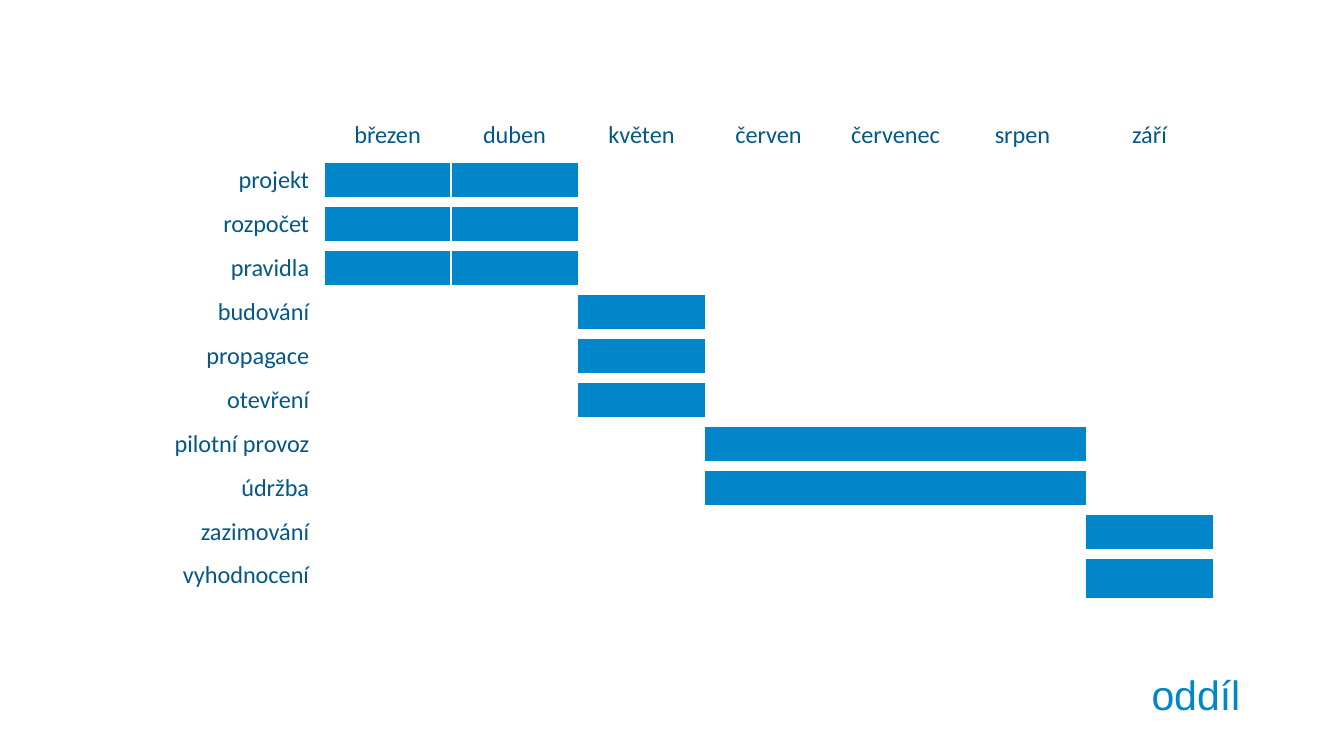
from lxml.etree import SubElement
from pptx import Presentation
from pptx.dml.color import RGBColor
from pptx.enum.text import MSO_ANCHOR as Anchor, PP_ALIGN as Align
from pptx.oxml.ns import qn
from pptx.util import Pt

EMU_PER_PX = 914400 / 134.4
COLORS = {"bar": "0086C9", "label": "035887", "gap": "FFFFFF"}
LABEL_FONT = {"name": "Calibri", "size": Pt(13)}
SIGN_FONT = {"name": "Arial", "size": Pt(22)}
CELL_FORMAT = {"margin_left": 15, "margin_right": 15, "margin_top": 6, "margin_bottom": 6}
PLAIN_TABLE_STYLE = "{2D5ABB26-0587-4C30-8999-92F81FD0307C}"

MONTHS = ["březen", "duben", "květen", "červen", "červenec", "srpen", "září"]
TASKS = [
    ("projekt", "březen", "duben"),
    ("rozpočet", "březen", "duben"),
    ("pravidla", "březen", "duben"),
    ("budování", "květen", "květen"),
    ("propagace", "květen", "květen"),
    ("otevření", "květen", "květen"),
    ("pilotní provoz", "červen", "srpen"),
    ("údržba", "červen", "srpen"),
    ("zazimování", "září", "září"),
    ("vyhodnocení", "září", "září"),
]


def px(value):
    return round(value * EMU_PER_PX)


def color(name):
    return RGBColor.from_string(COLORS[name])


class SlideBuilder:
    def __init__(self, presentation):
        self.slide = presentation.slides.add_slide(presentation.slide_layouts[6])

    def add_words(self, paragraph, text, align, font, color_name):
        paragraph.alignment = align
        run = paragraph.add_run()
        run.text = text
        for name, value in font.items():
            setattr(run.font, name, value)
        run.font.color.rgb = color(color_name)

    def text(self, left, top, width, height, text):
        frame = self.slide.shapes.add_textbox(*map(px, (left, top, width, height))).text_frame
        frame.word_wrap = True
        self.add_words(frame.paragraphs[0], text, Align.CENTER, SIGN_FONT, "bar")

    def borders(self, cell, widths):
        properties = cell._tc.get_or_add_tcPr()
        for side in "LRTB":
            if side in widths:
                line = SubElement(properties, qn(f"a:ln{side}"), w=str(Pt(widths[side])))
                fill = SubElement(line, qn("a:solidFill"))
                SubElement(fill, qn("a:srgbClr"), val=COLORS["gap"])

    def cell(self, cell, text, align, widths, filled=False):
        for name, value in CELL_FORMAT.items():
            setattr(cell, name, px(value))
        cell.vertical_anchor = Anchor.MIDDLE
        self.borders(cell, widths)
        if filled:
            cell.fill.solid()
            cell.fill.fore_color.rgb = color("bar")
        else:
            cell.fill.background()
        paragraph = cell.text_frame.paragraphs[0]
        if text:
            self.add_words(paragraph, text, align, LABEL_FONT, "label")
        else:
            SubElement(paragraph._p, qn("a:endParaRPr"), sz=str(LABEL_FONT["size"].centipoints))

    def gantt(self, left, top, label_width, month_width, header_height, row_height):
        widths = [label_width] + [month_width] * len(MONTHS)
        heights = [header_height] + [row_height] * len(TASKS)
        frame = self.slide.shapes.add_table(
            len(heights), len(widths), px(left), px(top), px(sum(widths)), px(sum(heights)))
        table = frame.table
        table.first_row = table.horz_banding = False
        table._tbl.tblPr.find(qn("a:tableStyleId")).text = PLAIN_TABLE_STYLE
        for column, width in zip(table.columns, widths):
            column.width = px(width)
        for row, height in zip(table.rows, heights):
            row.height = px(height)

        self.cell(table.cell(0, 0), "", Align.CENTER, {"R": 1.5})
        for column, month in enumerate(MONTHS, 1):
            sides = {"L": 1.5, "B": 6}
            if column < len(MONTHS):
                sides["R"] = 1.5
            self.cell(table.cell(0, column), month, Align.CENTER, sides)

        for row, (task, first, last) in enumerate(TASKS, 1):
            self.cell(table.cell(row, 0), task, Align.RIGHT, {"R": 1.5})
            active = range(MONTHS.index(first) + 1, MONTHS.index(last) + 2)
            for column in range(1, len(widths)):
                sides = {"T": 6}
                if row < len(TASKS):
                    sides["B"] = 6
                if column == 1:
                    sides["L"] = 1.5
                self.cell(table.cell(row, column), "", Align.CENTER, sides, column in active)


def main():
    presentation = Presentation()
    presentation.slide_width = px(1344)
    presentation.slide_height = px(756)
    builder = SlideBuilder(presentation)
    builder.text(1095, 663, 202, 63, "oddíl")
    builder.gantt(left=132, top=113, label_width=192, month_width=127,
                  header_height=45, row_height=44)
    presentation.save("out.pptx")


if __name__ == "__main__":
    main()
